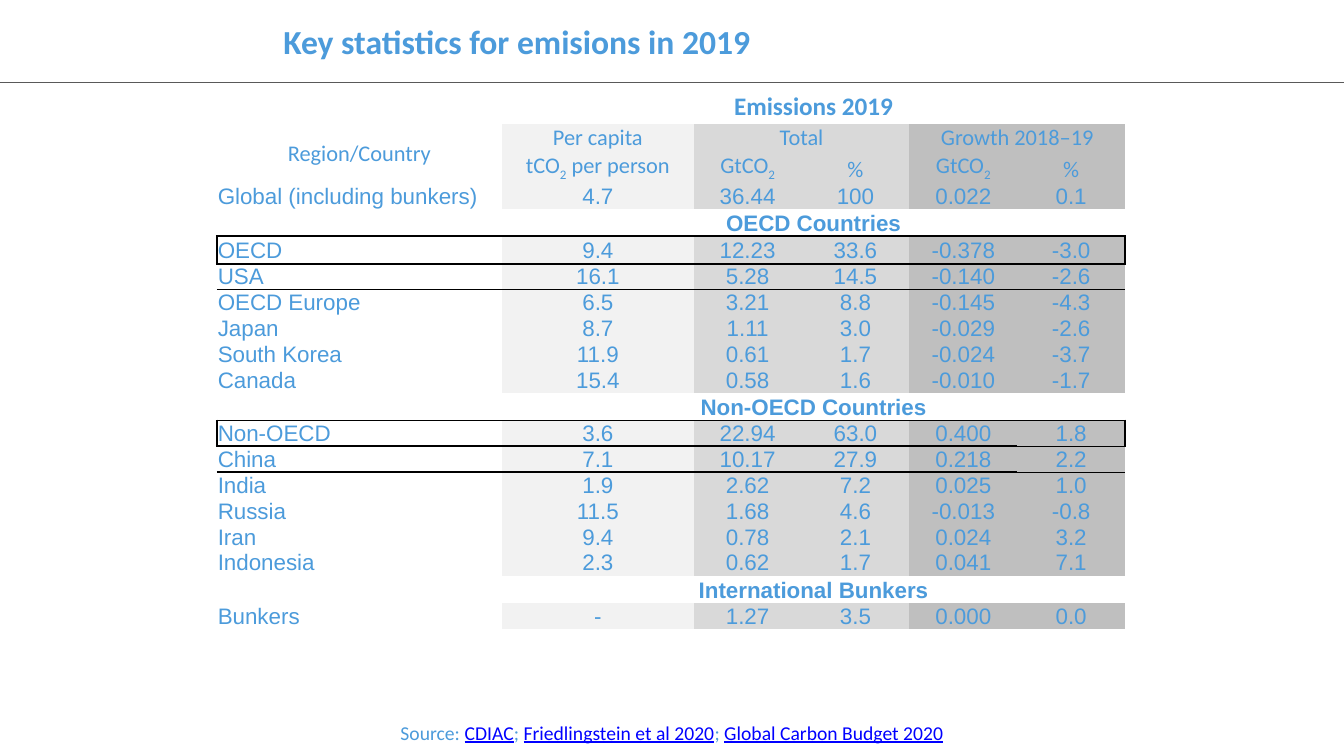
from lxml import etree
from pptx import Presentation
from pptx.dml.color import RGBColor
from pptx.enum.shapes import MSO_CONNECTOR
from pptx.enum.text import MSO_ANCHOR, MSO_AUTO_SIZE, PP_ALIGN
from pptx.oxml.ns import qn
from pptx.util import Inches, Pt

LEFT, CENTER = PP_ALIGN.LEFT, PP_ALIGN.CENTER
MIDDLE, BOTTOM = MSO_ANCHOR.MIDDLE, MSO_ANCHOR.BOTTOM
STRAIGHT, NO_FIT = MSO_CONNECTOR.STRAIGHT, MSO_AUTO_SIZE.NONE
NO_GRID_STYLE = "{2D5ABB26-0587-4C30-8999-92F81FD0307C}"

THEME = {
    "text": "4C9BDB", "link": "0000FF", "rule": "595959", "frame": "000000",
    "columns": ["FFFFFF", "F2F2F2", "D9D9D9", "D9D9D9", "BFBFBF", "BFBFBF"],
    "head_font": "Calibri", "body_font": "Arial",
    "title": Pt(24), "table_title": Pt(18), "body": Pt(16), "source": Pt(14),
}


def add_span(para, text, size, font, color="text", **formats):
    span = para.add_run()
    span.text = text
    values = {"size": size, "name": font, "bold": False, **formats}
    for name, value in values.items():
        setattr(span.font, name, value)
    span.font.color.rgb = RGBColor.from_string(THEME[color])
    return span


def add_border(cell, side, width):
    line = etree.SubElement(cell._tc.get_or_add_tcPr(), qn("a:ln" + side), w=str(Pt(width)))
    fill = etree.SubElement(line, qn("a:solidFill"))
    etree.SubElement(fill, qn("a:srgbClr"), val=THEME["frame"])


deck = Presentation()
deck.slide_width, deck.slide_height = Inches(13.33), Inches(7.5)
WIDTH, HEIGHT = deck.slide_width, deck.slide_height
page = deck.slides.add_slide(deck.slide_layouts[5])

# Title and the rule below it
title = page.shapes.title
title.left, title.top = Inches(2.71), Inches(0.13)
title.width, title.height = WIDTH - title.left, Inches(0.55)
title.text_frame.auto_size = NO_FIT
title.text_frame.vertical_anchor = MIDDLE
para = title.text_frame.paragraphs[0]
para.alignment = LEFT
add_span(para, "Key statistics for emisions in 2019", THEME["title"], THEME["head_font"], bold=True)

rule = page.shapes.add_connector(STRAIGHT, 0, Inches(0.82), WIDTH, Inches(0.82))
rule.line.color.rgb = RGBColor.from_string(THEME["rule"])
rule.line.width = Pt(0.75)
etree.SubElement(rule._element.spPr, qn("a:effectLst"))

# Table content: underscores enclose a subscript
ROWS = [
    ["", "Emissions 2019"],
    ["Region/Country", "Per capita", "Total", "", "Growth 2018–19", ""],
    ["", "tCO_2_ per person", "GtCO_2_", "%", "GtCO_2_", "%"],
    ["Global (including bunkers)", "4.7", "36.44", "100", "0.022", "0.1"],
    ["", "OECD Countries"],
    ["OECD", "9.4", "12.23", "33.6", "-0.378", "-3.0"],
    ["USA", "16.1", "5.28", "14.5", "-0.140", "-2.6"],
    ["OECD Europe", "6.5", "3.21", "8.8", "-0.145", "-4.3"],
    ["Japan", "8.7", "1.11", "3.0", "-0.029", "-2.6"],
    ["South Korea", "11.9", "0.61", "1.7", "-0.024", "-3.7"],
    ["Canada", "15.4", "0.58", "1.6", "-0.010", "-1.7"],
    ["", "Non-OECD Countries"],
    ["Non-OECD", "3.6", "22.94", "63.0", "0.400", "1.8"],
    ["China", "7.1", "10.17", "27.9", "0.218", "2.2"],
    ["India", "1.9", "2.62", "7.2", "0.025", "1.0"],
    ["Russia", "11.5", "1.68", "4.6", "-0.013", "-0.8"],
    ["Iran", "9.4", "0.78", "2.1", "0.024", "3.2"],
    ["Indonesia", "2.3", "0.62", "1.7", "0.041", "7.1"],
    ["", "International Bunkers"],
    ["Bunkers", "-", "1.27", "3.5", "0.000", "0.0"],
]
COLUMN_WIDTHS = [2.83, 1.9] + [1.07] * 4
ROW_HEIGHT = 18.5
TALL_ROWS = {0: 23.5, 1: 20, 2: 22.5, 5: 19.5}
HEAD_ROWS, LAST = 3, len(COLUMN_WIDTHS) - 1
FRAMED_ROWS = [r for r, row in enumerate(ROWS) if row[0] in ("OECD", "Non-OECD")]
THIN_ROW = FRAMED_ROWS[-1]

# Table grid
heights = [Pt(TALL_ROWS.get(r, ROW_HEIGHT)) for r in range(len(ROWS))]
widths = [Inches(width) for width in COLUMN_WIDTHS]
table = page.shapes.add_table(len(ROWS), len(widths), Inches(2.15), Inches(0.9),
                              sum(widths), sum(heights)).table
table.first_row = table.horz_banding = False
table._tbl.tblPr.find(qn("a:tableStyleId")).text = NO_GRID_STYLE
for column, width in zip(table.columns, widths):
    column.width = width
for line, height in zip(table.rows, heights):
    line.height = height

# Merged cells
table.cell(1, 0).merge(table.cell(2, 0))
for c in (2, 4):
    table.cell(1, c).merge(table.cell(1, c + 1))
for r, row in enumerate(ROWS):
    if len(row) == 2:
        table.cell(r, 1).merge(table.cell(r, LAST))

# Cells
for r, row in enumerate(ROWS):
    is_band = len(row) == 2
    font = THEME["head_font"] if r < HEAD_ROWS else THEME["body_font"]
    size = THEME["table_title"] if r == 0 else THEME["body"]
    for c, color in enumerate(THEME["columns"]):
        cell = table.cell(r, c)
        formats = {"margin_left": Inches(0.01), "margin_right": Inches(0.01),
                   "margin_top": 0, "margin_bottom": 0,
                   "vertical_anchor": MIDDLE if r < 2 or (r, c) == (2, 1) else BOTTOM}
        for name, value in formats.items():
            setattr(cell, name, value)

        sides = {}
        if r in FRAMED_ROWS:
            sides = {"L": c == 0, "R": c == LAST, "T": True, "B": True}
        elif r + 1 in FRAMED_ROWS:
            sides = {"B": True}
        elif r - 1 in FRAMED_ROWS:
            sides = {"T": True}
        for side, shown in sides.items():
            if shown:
                is_thin = c == LAST and r in (THIN_ROW, THIN_ROW + 1) and side in "TB"
                add_border(cell, side, 1 if is_thin else 1.5)
        cell.fill.solid()
        cell.fill.fore_color.rgb = RGBColor.from_string("FFFFFF" if is_band else color)

        para = cell.text_frame.paragraphs[0]
        para.alignment = LEFT if c == 0 and r >= HEAD_ROWS else CENTER
        text = row[c] if c < len(row) else ""
        for i, part in enumerate(text.split("_")):
            if part:
                span = add_span(para, part, size, font, bold=is_band)
                if i % 2:
                    span.font._element.set("baseline", "-25000")
        if not text:
            etree.SubElement(para._p, qn("a:endParaRPr"), sz=str(int(THEME["body"].pt * 100)))

# Source line
source = page.shapes.add_textbox((WIDTH - Inches(10)) // 2, Inches(6.83), Inches(10), Inches(0.6))
source.text_frame.word_wrap = True
source.text_frame.vertical_anchor = BOTTOM
para = source.text_frame.paragraphs[0]
para.alignment = CENTER
lead = "Source: "
for name in ("CDIAC", "Friedlingstein et al 2020", "Global Carbon Budget 2020"):
    add_span(para, lead, THEME["source"], THEME["head_font"])
    add_span(para, name, THEME["source"], THEME["head_font"], "link", underline=True)
    lead = "; "

deck.save("out.pptx")
